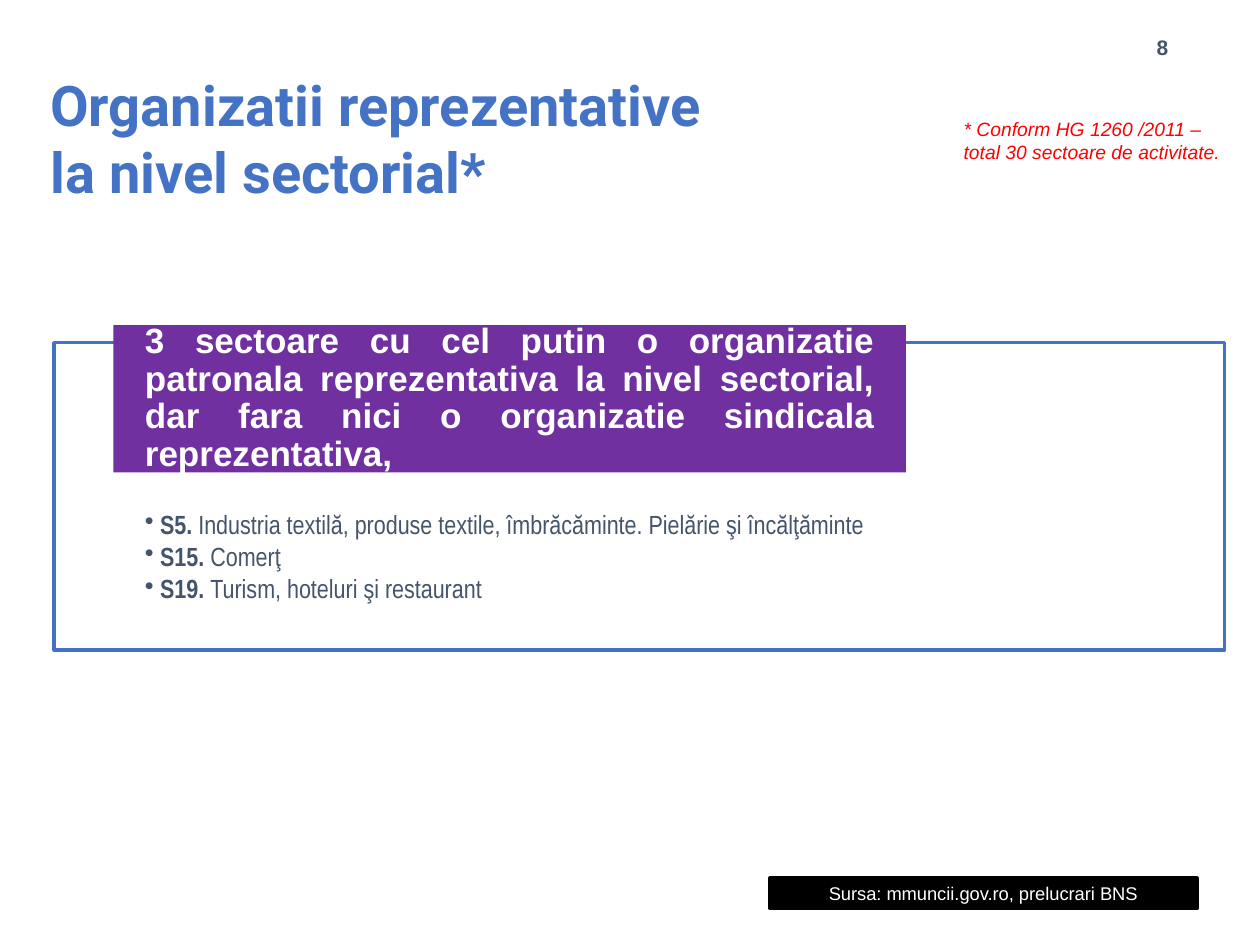
from lxml.etree import SubElement
from pptx import Presentation
from pptx.dml.color import RGBColor
from pptx.enum.shapes import MSO_SHAPE
from pptx.enum.text import MSO_ANCHOR, PP_ALIGN
from pptx.oxml.ns import qn
from pptx.util import Inches, Pt

COLORS = {
    "blue": "4472C4",
    "slate": "44546A",
    "purple": "7030A0",
    "black": "000000",
    "white": "FFFFFF",
    "red": "FF0000",
}

SECTORS = [
    ("S5. ", "Industria textilă, produse textile, îmbrăcăminte. Pielărie şi încălţăminte"),
    ("S15.", " Comerţ"),
    ("S19. ", "Turism, hoteluri şi restaurant"),
]


def rgb(name):
    return RGBColor.from_string(COLORS[name])


def style_run(run, size, color, font="Arial", bold=False, italic=False):
    run.font.size = Pt(size)
    run.font.name = font
    run.font.bold = bold
    run.font.italic = italic
    run.font.color.rgb = rgb(color)


def set_frame(frame, anchor, insets):
    frame.word_wrap = True
    frame.vertical_anchor = anchor
    (frame.margin_left, frame.margin_top,
     frame.margin_right, frame.margin_bottom) = [Inches(i) for i in insets]


def write(shape, text, align=PP_ALIGN.LEFT, anchor=MSO_ANCHOR.TOP,
          insets=(0.1, 0.05, 0.1, 0.05), **style):
    """Put one formatted paragraph into a shape and return the paragraph."""
    frame = shape.text_frame
    set_frame(frame, anchor, insets)
    frame.text = text
    paragraph = frame.paragraphs[0]
    paragraph.alignment = align
    style_run(paragraph.runs[0], **style)
    return paragraph


def add_label(slide, box, text, **options):
    label = slide.shapes.add_textbox(*[Inches(v) for v in box])
    return write(label, text, **options)


def add_box(slide, box, fill=None, line=None):
    rect = slide.shapes.add_shape(MSO_SHAPE.RECTANGLE, *[Inches(v) for v in box])
    rect.shadow.inherit = False
    if fill:
        rect.fill.solid()
        rect.fill.fore_color.rgb = rgb(fill)
    else:
        rect.fill.background()
    if line:
        rect.line.color.rgb = rgb(line)
        rect.line.width = Pt(2)
    else:
        rect.line.fill.background()
    return rect


def add_bullet(paragraph, hang):
    properties = paragraph._p.get_or_add_pPr()
    properties.set("marL", str(Inches(hang)))
    properties.set("indent", str(-Inches(hang)))
    SubElement(properties, qn("a:buChar")).set("char", "•")


def write_sectors(shape):
    frame = shape.text_frame
    set_frame(frame, MSO_ANCHOR.TOP, (0.72, 1.34, 0.72, 0.12))
    for index, (code, name) in enumerate(SECTORS):
        item = frame.add_paragraph() if index else frame.paragraphs[0]
        add_bullet(item, 0.12)
        item.alignment = PP_ALIGN.JUSTIFY
        item.line_spacing = 0.9
        item.space_after = Pt(2.25)
        for text, bold in ((code, True), (name, False)):
            run = item.add_run()
            run.text = text
            style_run(run, 15, "slate", font="Arial Narrow", bold=bold)


def main():
    prs = Presentation()
    prs.slide_width, prs.slide_height = Inches(10), Inches(7.5)
    slide = prs.slides.add_slide(prs.slide_layouts[6])

    # Title and page number
    add_label(slide, (0.2, 0.47, 5.83, 1.24),
              "Organizatii reprezentative la nivel sectorial*",
              anchor=MSO_ANCHOR.MIDDLE, insets=(0.2, 0.05, 0, 0.05),
              size=32, color="blue", font="Roboto", bold=True)
    add_label(slide, (8.95, 0.19, 0.55, 0.33), "8",
              align=PP_ALIGN.CENTER, anchor=MSO_ANCHOR.BOTTOM,
              size=12, color="slate", bold=True)

    # Framed list of sectors
    sectors = add_box(slide, (0.43, 2.72, 9.29, 2.44), line="blue")
    write_sectors(sectors)

    # Heading over the frame
    heading_box = add_box(slide, (0.9, 2.58, 6.29, 1.17), fill="purple")
    heading = write(
        heading_box,
        "3 sectoare cu cel putin o organizatie patronala reprezentativa la nivel "
        "sectorial, dar fara nici o organizatie sindicala reprezentativa,",
        align=PP_ALIGN.JUSTIFY, anchor=MSO_ANCHOR.MIDDLE,
        insets=(0.25, 0, 0.25, 0), size=20, color="white", bold=True)
    heading.line_spacing = 0.9

    # Source and footnote
    source = add_box(slide, (6.11, 6.97, 3.39, 0.24), fill="black", line="black")
    write(source, "Sursa: mmuncii.gov.ro, prelucrari BNS",
          align=PP_ALIGN.CENTER, anchor=MSO_ANCHOR.MIDDLE,
          size=10.5, color="white")
    add_label(slide, (7.55, 0.88, 2.24, 0.47),
              "* Conform HG 1260 /2011 – total 30 sectoare de activitate.",
              size=11, color="red", italic=True)

    prs.save("out.pptx")


if __name__ == "__main__":
    main()
